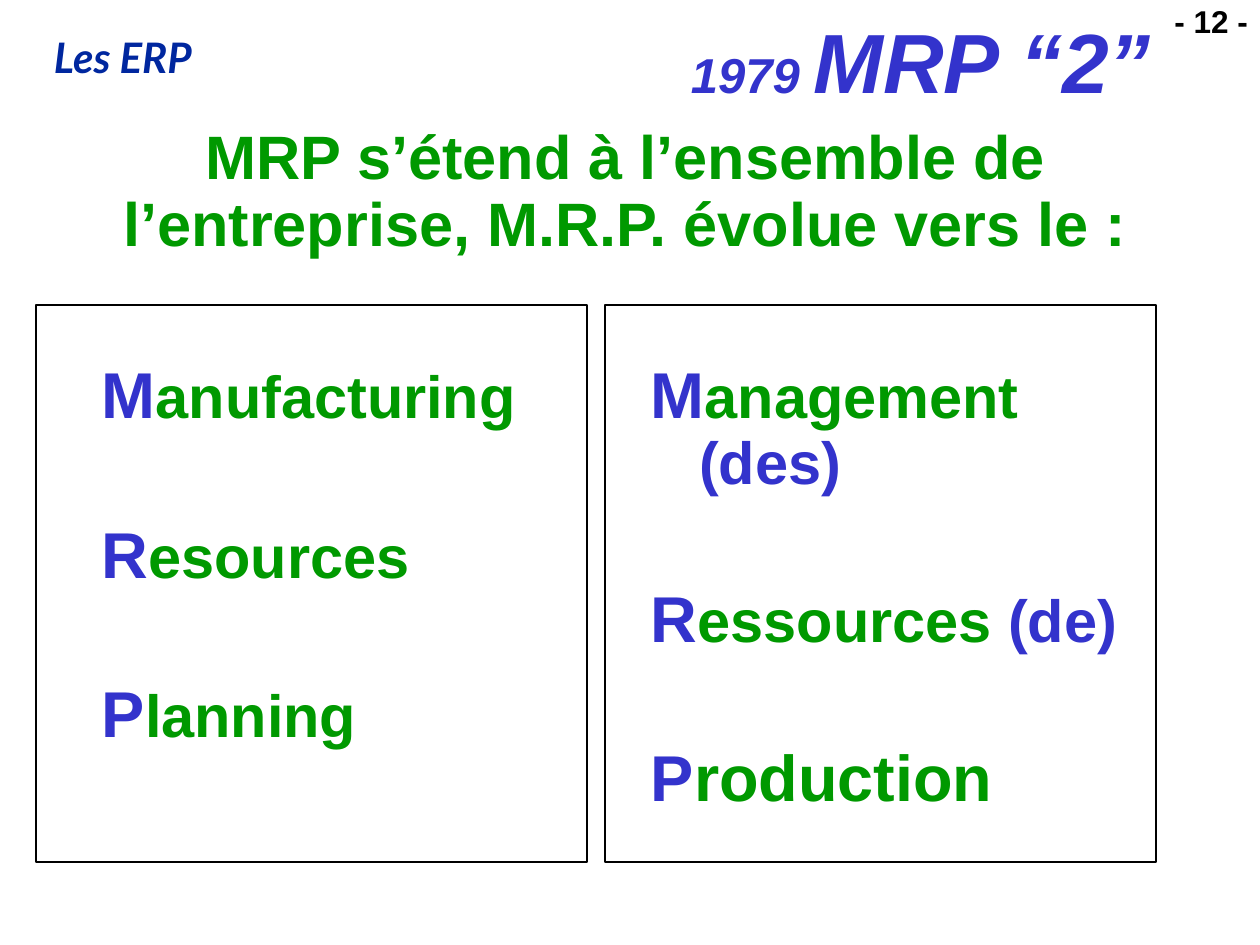
from dataclasses import dataclass

from pptx import Presentation
from pptx.dml.color import RGBColor
from pptx.enum.shapes import MSO_SHAPE as Shape
from pptx.enum.text import MSO_ANCHOR as Anchor, PP_ALIGN as Align
from pptx.util import Emu, Pt

PX = 914400 / 126


def px(value):
    return Emu(round(value * PX))


@dataclass(frozen=True)
class Theme:
    font: str = "Arial"
    brand_font: str = "Lato"
    navy: str = "00279F"
    blue: str = "3333CC"
    green: str = "009900"
    black: str = "000000"
    title: int = 48
    year: int = 28
    heading: int = 35
    initial: int = 37
    word: int = 34
    brand: int = 24
    number: int = 18
    spacing: float = 0.9
    term_gap: int = 51
    border: float = 0.75


class SlideWriter:
    def __init__(self, page, theme):
        self.page = page
        self.theme = theme

    def frame(self, left, top, width, height):
        box = self.page.shapes.add_shape(
            Shape.RECTANGLE, px(left), px(top), px(width), px(height))
        box.shadow.inherit = False
        box.fill.background()
        box.line.color.rgb = RGBColor.from_string(self.theme.black)
        box.line.width = Pt(self.theme.border)

    def text(self, area, paragraphs, align=Align.LEFT, anchor=Anchor.TOP,
             side=12, inset=6, font=None, italic=False, hanging=0, gap=0):
        box = self.page.shapes.add_textbox(*map(px, area))
        body = box.text_frame
        body.word_wrap = True
        body.vertical_anchor = anchor
        body.margin_left = body.margin_right = px(side)
        body.margin_top, body.margin_bottom = px(inset), px(6)
        for index, runs in enumerate(paragraphs):
            para = body.add_paragraph() if index else body.paragraphs[0]
            para.alignment = align
            para.line_spacing = self.theme.spacing
            para.space_before = Pt(gap if index else 0)
            if hanging:
                properties = para._p.get_or_add_pPr()
                properties.set("marL", str(px(hanging)))
                properties.set("indent", str(-px(hanging)))
            for words, size, color in runs:
                span = para.add_run()
                span.text = words
                span.font.name = font or self.theme.font
                span.font.size = Pt(size)
                span.font.bold = True
                span.font.italic = italic
                span.font.color.rgb = RGBColor.from_string(color)

    def terms(self, left, width, paragraphs):
        self.text((left, 275, width, 566), paragraphs, side=11, inset=88,
                  hanging=48, gap=self.theme.term_gap)


def main():
    theme = Theme()
    deck = Presentation()
    deck.slide_width, deck.slide_height = px(1260), px(945)
    page = deck.slides.add_slide(deck.slide_layouts[6])
    writer = SlideWriter(page, theme)

    def initial(letter):
        return letter, theme.initial, theme.blue

    def rest(words):
        return words, theme.word, theme.green

    def link(words):
        return words, theme.word, theme.blue

    writer.text((42, 31, 1018, 58), [[("Les ERP", theme.brand, theme.navy)]],
                font=theme.brand_font, italic=True)
    writer.text((1145, 0, 115, 47), [[("- 12 -", theme.number, theme.black)]],
                align=Align.RIGHT)
    writer.terms(91, 529, [
        [initial("M"), rest("anufacturing")],
        [initial("R"), rest("esources")],
        [initial("P"), rest("lanning")],
    ])
    writer.terms(640, 542, [
        [initial("M"), rest("anagement "), link("(des)")],
        [initial("R"), rest("essources "), link("(de)")],
        [initial("P"), ("roduction", theme.initial, theme.green)],
    ])
    writer.text((32, 121, 1187, 145), [[
        ("MRP s’étend à l’ensemble de l’entreprise, M.R.P. évolue vers le :",
         theme.heading, theme.green)]], align=Align.CENTER, side=11)
    for left in (36, 605):
        writer.frame(left, 305, 551, 557)
    writer.text((97, 14, 1066, 105), [[
        ("1979 ", theme.year, theme.blue),
        ("MRP “2”", theme.title, theme.blue)]],
        align=Align.RIGHT, anchor=Anchor.MIDDLE, italic=True)

    deck.save("out.pptx")


if __name__ == "__main__":
    main()
